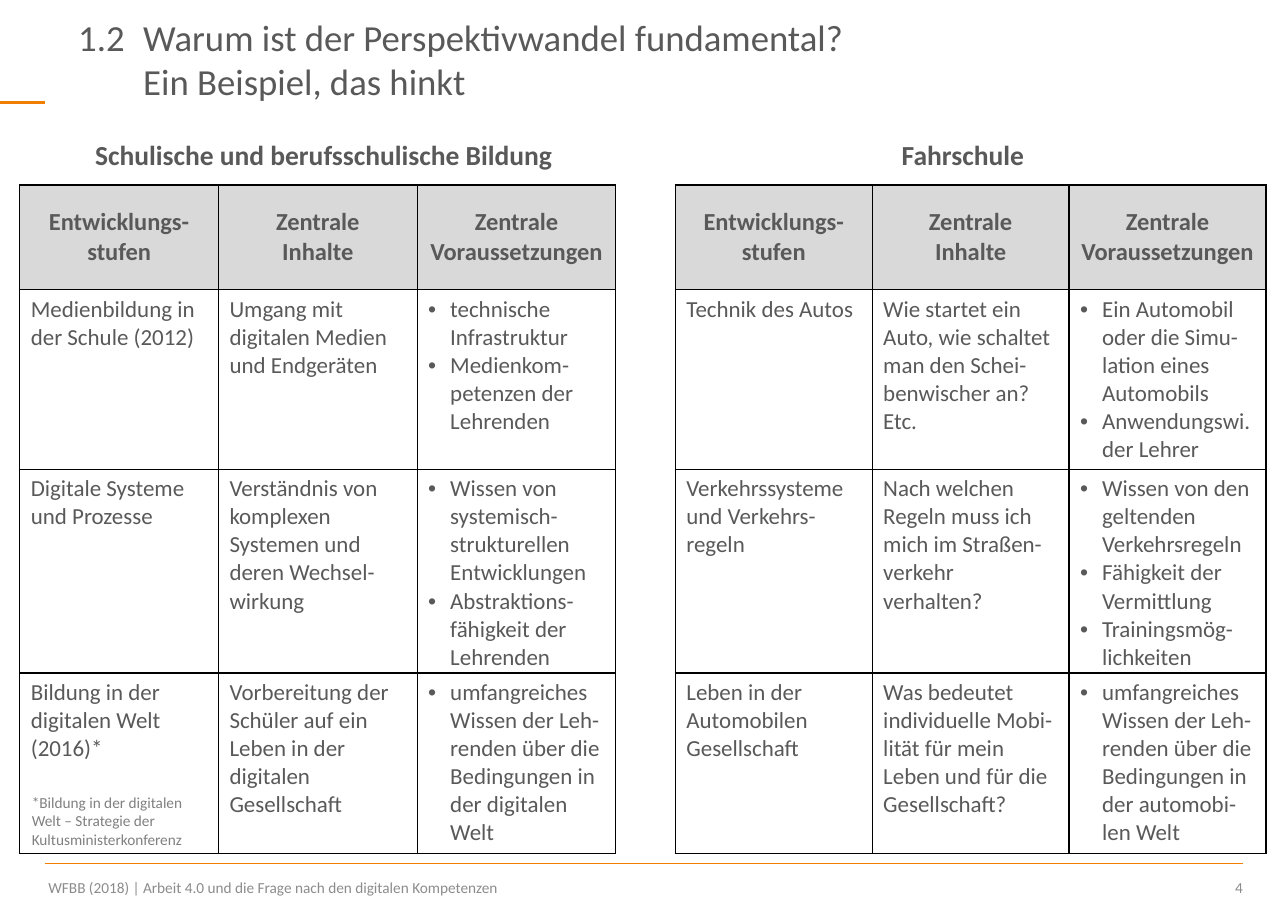
from lxml.etree import SubElement
from pptx import Presentation
from pptx.dml.color import RGBColor as RGB
from pptx.enum.shapes import MSO_CONNECTOR as CONN
from pptx.enum.text import MSO_ANCHOR as ANCHOR, MSO_AUTO_SIZE as AUTO, PP_ALIGN as ALIGN
from pptx.oxml import parse_xml
from pptx.oxml.ns import nsdecls, qn
from pptx.util import Inches, Pt

COLORS = {
    "accent": "F07E00",
    "text": "595959",
    "footer": "8C8C8C",
    "note": "808080",
    "header": "D9D9D9",
    "body": "FFFFFF",
    "border": "000000",
}

HEADERS = ["Entwicklungs-stufen", "Zentrale\nInhalte", "Zentrale Voraussetzungen"]
ROW_HEIGHTS = [0.95, 1.63, 1.85, 1.64]

SCHOOL = [
    ["Medienbildung in der Schule (2012)",
     "Umgang mit digitalen Medien und Endgeräten",
     "technische Infrastruktur\nMedienkom-petenzen der Lehrenden"],
    ["Digitale Systeme und Prozesse",
     "Verständnis von komplexen Systemen und deren Wechsel-wirkung",
     "Wissen von systemisch-strukturellen Entwicklungen\n"
     "Abstraktions-fähigkeit der Lehrenden"],
    ["Bildung in der digitalen Welt (2016)*",
     "Vorbereitung der Schüler auf ein Leben in der digitalen Gesellschaft",
     "umfangreiches Wissen der Leh-renden über die Bedingungen in der digitalen Welt"],
]

DRIVING = [
    ["Technik des Autos",
     "Wie startet ein Auto, wie schaltet man den Schei-benwischer an? Etc.",
     "Ein Automobil oder die Simu-lation eines Automobils\nAnwendungswi. der Lehrer"],
    ["Verkehrssysteme und Verkehrs-regeln",
     "Nach welchen Regeln muss ich mich im Straßen-verkehr verhalten?",
     "Wissen von den geltenden Verkehrsregeln\nFähigkeit der Vermittlung\n"
     "Trainingsmög-lichkeiten"],
    ["Leben in der Automobilen Gesellschaft",
     "Was bedeutet individuelle Mobi-lität für mein Leben und für die Gesellschaft?",
     "umfangreiches Wissen der Leh-renden über die Bedingungen in der automobi-len Welt"],
]


class Deck:
    font = "Calibri"

    def __init__(self, width, height):
        self.prs = Presentation()
        self.prs.slide_width = Inches(width)
        self.prs.slide_height = Inches(height)
        self.s = self.prs.slides.add_slide(self.prs.slide_layouts[5])

    def style(self, tf, size, color, bold=False, align=ALIGN.LEFT):
        for p in tf.paragraphs:
            p.alignment = align
            for r in p.runs:
                r.font.name = self.font
                r.font.size = Pt(size)
                r.font.bold = bold
                r.font.color.rgb = RGB.from_string(COLORS[color])

    def title(self, text, x, y, w, h, tab):
        sp = self.s.shapes.title
        sp.left, sp.top, sp.width, sp.height = map(Inches, (x, y, w, h))
        tf = sp.text_frame
        tf.text = text
        tf.auto_size = AUTO.NONE
        tf.vertical_anchor = ANCHOR.TOP
        first, second = tf.paragraphs
        tabs = SubElement(first._p.get_or_add_pPr(), qn("a:tabLst"))
        SubElement(tabs, qn("a:tab"), pos=str(Inches(tab)), algn="l")
        second._p.get_or_add_pPr().set("marL", str(Inches(tab)))
        self.style(tf, 24, "text")

    def text(self, text, x, y, w, h, size, color, bold=False, align=ALIGN.LEFT, insets=None):
        tf = self.s.shapes.add_textbox(*map(Inches, (x, y, w, h))).text_frame
        tf.word_wrap = True
        if insets:
            tf.margin_left, tf.margin_top, tf.margin_right, tf.margin_bottom = map(Inches, insets)
        tf.text = text
        self.style(tf, size, color, bold, align)

    def line(self, x1, y1, x2, y2, width):
        c = self.s.shapes.add_connector(CONN.STRAIGHT, *map(Inches, (x1, y1, x2, y2)))
        c.line.color.rgb = RGB.from_string(COLORS["accent"])
        c.line.width = Pt(width)
        SubElement(c._element.spPr, qn("a:effectLst"))

    def borders(self, cell):
        tcPr = cell._tc.get_or_add_tcPr()
        for i, side in enumerate("LRTB"):
            tcPr.insert(i, parse_xml(
                f'<a:ln{side} {nsdecls("a")} w="{Pt(1)}"><a:solidFill>'
                f'<a:srgbClr val="{COLORS["border"]}"/></a:solidFill></a:ln{side}>'))

    def bullets(self, tf):
        for p in tf.paragraphs:
            pPr = p._p.get_or_add_pPr()
            pPr.set("marL", str(Inches(0.2)))
            pPr.set("indent", str(Inches(-0.2)))
            SubElement(pPr, qn("a:buFont"), typeface="Arial")
            SubElement(pPr, qn("a:buChar"), char="•")

    def table(self, rows, x, y, w):
        cells = [HEADERS] + rows
        tbl = self.s.shapes.add_table(
            len(cells), len(HEADERS), *map(Inches, (x, y, w, sum(ROW_HEIGHTS)))).table
        tbl.horz_banding = tbl.first_row = False
        for i, row in enumerate(cells):
            tbl.rows[i].height = Inches(ROW_HEIGHTS[i])
            for j, text in enumerate(row):
                cell = tbl.cell(i, j)
                tf = cell.text_frame
                tf.text = text
                cell.margin_bottom = Inches(0.02)
                cell.fill.solid()
                cell.fill.fore_color.rgb = RGB.from_string(COLORS["body" if i else "header"])
                self.borders(cell)
                if i == 0:
                    cell.margin_bottom = Inches(0.05)
                    cell.vertical_anchor = ANCHOR.MIDDLE
                    self.style(tf, 16, "text", True, ALIGN.CENTER)
                    continue
                if j == 2:
                    self.bullets(tf)
                self.style(tf, 15, "text")


def main():
    d = Deck(11.69, 8.27)
    d.line(0, 0.93, 0.41, 0.93, 2)
    d.line(0.41, 7.84, 11.28, 7.84, 1)
    d.text("WFBB (2018) | Arbeit 4.0 und die Frage nach den digitalen Kompetenzen",
           0.41, 7.85, 10.17, 0.41, 10, "footer", insets=(0.03, 0.12, 0, 0))
    d.text("4", 10.58, 7.85, 0.7, 0.41, 10, "footer", align=ALIGN.RIGHT, insets=(0, 0.12, 0, 0))
    d.title("1.2\tWarum ist der Perspektivwandel fundamental?\nEin Beispiel, das hinkt",
            0.61, 0.08, 7.84, 0.91, 0.59)
    for heading, head_x, rows, x, w in [
        ("Schulische und berufsschulische Bildung", 0.32, SCHOOL, 0.18, 5.41),
        ("Fahrschule", 6.12, DRIVING, 6.13, 5.36),
    ]:
        d.table(rows, x, 1.68, w)
        d.text(heading, head_x, 1.2, 5.24, 0.4, 18, "text", True, ALIGN.CENTER)
    d.text("*Bildung in der digitalen Welt – Strategie der Kultusministerkonferenz",
           0.19, 7.15, 1.61, 0.61, 10, "note")
    d.prs.save("out.pptx")


if __name__ == "__main__":
    main()
